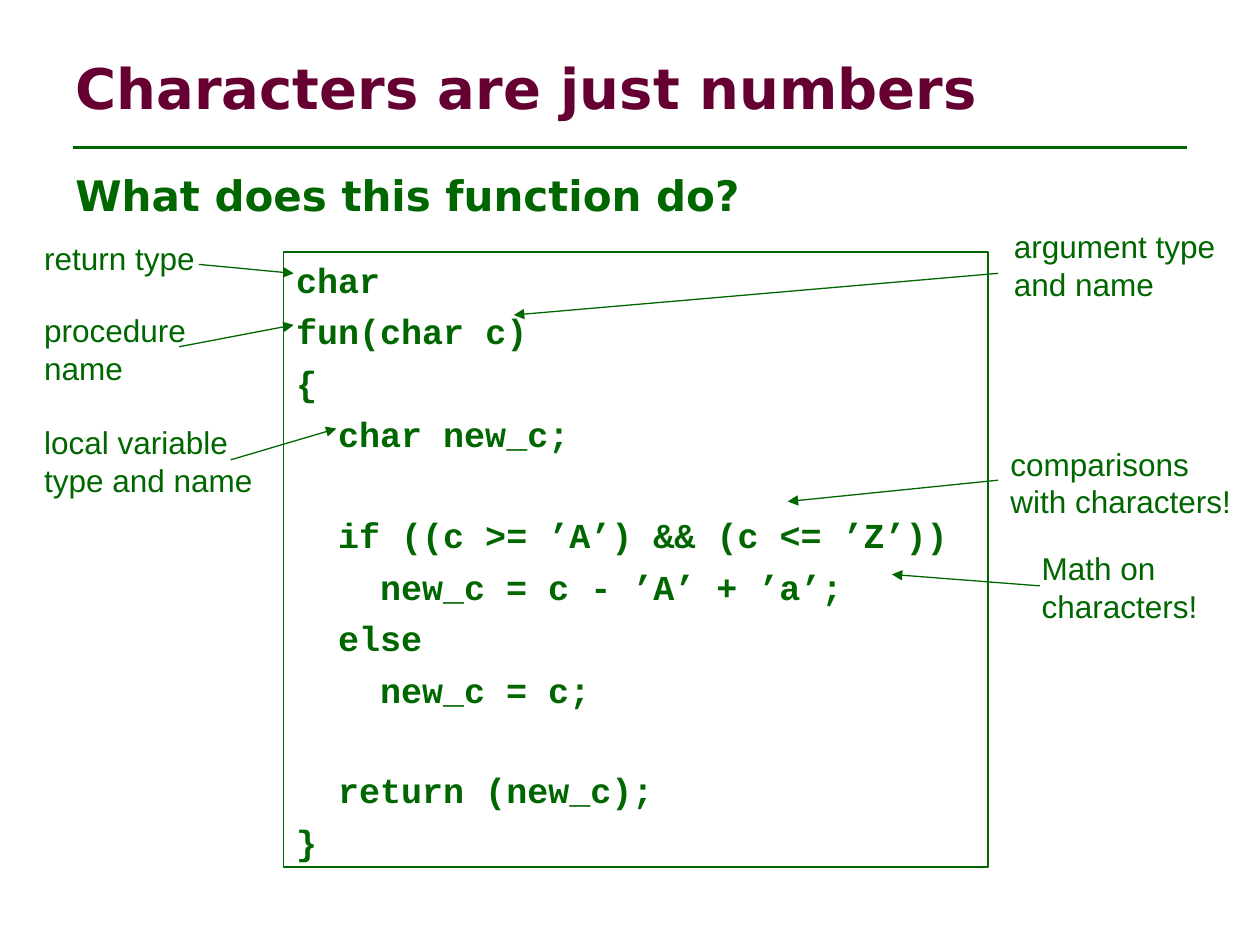
from dataclasses import dataclass

from lxml import etree
from pptx import Presentation
from pptx import util as u
from pptx.dml import color
from pptx.enum import shapes, text
from pptx.oxml import ns


@dataclass(frozen=True)
class Theme:
    green: color.RGBColor = color.RGBColor(0x00, 0x66, 0x00)
    plum: color.RGBColor = color.RGBColor(0x66, 0x00, 0x33)
    heading_font: str = "DejaVu Sans"
    code_font: str = "Courier New"
    label_font: str = "Arial"
    title_size: int = 32
    question_size: int = 24
    code_size: int = 20
    label_size: int = 18
    rule_width: float = 1.5
    thin_width: float = 0.75
    code_gap: float = 5.45
    code_pitch: float = 28.1


@dataclass(frozen=True)
class Box:
    left: float
    top: float
    width: float
    height: float

    def lengths(self):
        return [u.Cm(side) for side in (self.left, self.top, self.width, self.height)]

    def point(self, offset):
        return u.Cm(self.left + offset[0]), u.Cm(self.top + offset[1])


THEME = Theme()

CODE = [
    (0, "char"),
    (0, "fun(char c)"),
    (0, "{"),
    (1, "char new_c;"),
    None,
    (1, "if ((c >= ’A’) && (c <= ’Z’))"),
    (2, "new_c = c - ’A’ + ’a’;"),
    (1, "else"),
    (2, "new_c = c;"),
    None,
    (1, "return (new_c);"),
    (0, "}"),
]

LABELS = [
    (Box(0.64, 4.7, 3.56, 1.02), ["return type"], (3.37, 0.63), (5.28, 0.81)),
    (Box(0.64, 6.15, 3.56, 1.78), ["procedure", "name"], (2.97, 0.84), (5.28, 0.4)),
    (Box(20.19, 4.45, 4.57, 1.78), ["argument type", "and name"], (-0.07, 1.06), (-9.83, 1.9)),
    (Box(0.64, 8.41, 4.7, 1.78), ["local variable", "type and name"], (4.01, 0.86), (6.14, 0.23)),
    (Box(20.75, 10.95, 3.66, 1.78), ["Math on", "characters!"], (0.21, 0.86), (-2.77, 0.63)),
    (Box(20.12, 8.84, 4.95, 1.78), ["comparisons", "with characters!"], (0, 0.84), (-4.24, 1.27)),
]


def add_span(para, words, font, size, ink, bold=False):
    span = para.add_run()
    span.text = words
    span.font.name = font
    span.font.size = u.Pt(size)
    span.font.color.rgb = ink
    span.font.bold = bold


def next_para(frame, index):
    return frame.add_paragraph() if index else frame.paragraphs[0]


def add_line(page, start, end, width, arrow=False):
    line = page.shapes.add_connector(shapes.MSO_CONNECTOR.STRAIGHT, *start, *end)
    line.line.color.rgb = THEME.green
    line.line.width = u.Pt(width)
    if arrow:
        etree.SubElement(line.line._get_or_add_ln(), ns.qn("a:tailEnd"), type="triangle")
    etree.SubElement(line._element.spPr, ns.qn("a:effectLst"))


def add_title(page, box):
    frame = page.shapes.add_textbox(*box.lengths()).text_frame
    frame.word_wrap = True
    frame.vertical_anchor = text.MSO_ANCHOR.MIDDLE
    add_span(frame.paragraphs[0], "Characters are just numbers",
             THEME.heading_font, THEME.title_size, THEME.plum, True)
    inset = 0.2
    drop = box.height + 0.23
    add_line(page, box.point((inset, drop)), box.point((box.width - inset, drop)),
             THEME.rule_width)


def add_question(page, box):
    frame = page.shapes.add_textbox(*box.lengths()).text_frame
    frame.word_wrap = True
    para = frame.paragraphs[0]
    para.space_before = u.Pt(3)
    add_span(para, "What does this function do?",
             THEME.heading_font, THEME.question_size, THEME.green, True)


def add_code(page, box):
    panel = page.shapes.add_shape(shapes.MSO_SHAPE.RECTANGLE, *box.lengths())
    panel.shadow.inherit = False
    panel.fill.background()
    panel.line.color.rgb = THEME.green
    panel.line.width = u.Pt(THEME.thin_width)
    frame = panel.text_frame
    frame.word_wrap = True
    frame.vertical_anchor = text.MSO_ANCHOR.TOP
    indent = u.Pt(THEME.code_size * 1.2)
    gap = THEME.code_gap
    for index, entry in enumerate(CODE):
        if entry is None:
            gap += THEME.code_pitch
            continue
        depth, words = entry
        para = next_para(frame, index)
        para.alignment = text.PP_ALIGN.LEFT
        para.space_before = u.Pt(gap)
        para._p.get_or_add_pPr().set("marL", str(depth * indent))
        add_span(para, words, THEME.code_font, THEME.code_size, THEME.green, True)
        gap = THEME.code_gap


def add_label(page, box, lines, arrow_start, arrow_end):
    add_line(page, box.point(arrow_start), box.point(arrow_end), THEME.thin_width, arrow=True)
    frame = page.shapes.add_textbox(*box.lengths()).text_frame
    frame.word_wrap = False
    for index, words in enumerate(lines):
        para = next_para(frame, index)
        para.alignment = text.PP_ALIGN.LEFT
        add_span(para, words, THEME.label_font, THEME.label_size, THEME.green)


def main():
    deck = Presentation()
    deck.slide_width, deck.slide_height = u.Cm(25.4), u.Cm(19.05)
    page = deck.slides.add_slide(deck.slide_layouts[6])
    add_title(page, Box(1.27, 0.76, 22.86, 1.98))
    add_question(page, Box(1.27, 3.3, 22.86, 1.4))
    add_code(page, Box(5.72, 5.08, 14.2, 12.4))
    for label in LABELS:
        add_label(page, *label)
    deck.save("out.pptx")


if __name__ == "__main__":
    main()
